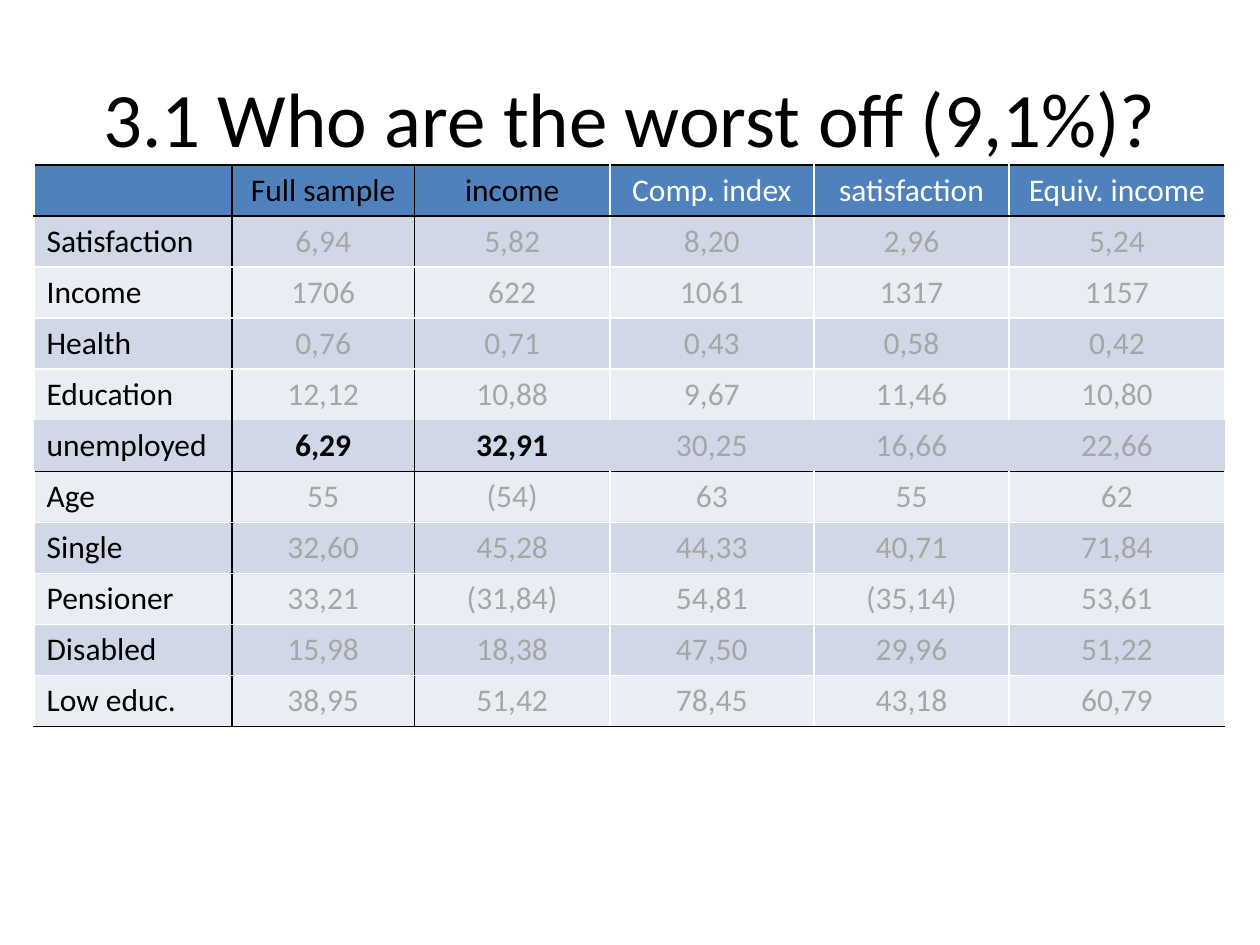
import pptx
import pptx.dml.color
import pptx.enum.text
import pptx.oxml
import pptx.oxml.ns
import pptx.util
from lxml import etree

BLACK, WHITE, GREY = "000000", "FFFFFF", "A6A6A6"
HEADER_FILL = "4F81BD"
BAND_FILLS = ("E9EDF4", "D0D8E8")
COLUMN_WIDTHS = (1.57, 1.45, 1.55, 1.62, 1.55, 1.71)
BLACK_ROW_EDGES = (0, 1, 6, 11)
OPEN_ROW_EDGES = (5,)
BLACK_COLUMN_EDGES = (1, 2)
HIGHLIGHT_ROW = 5
HIGHLIGHT_COLUMNS = (1, 2)

ROWS = (
    ("", "Full sample", "income", "Comp. index", "satisfaction", "Equiv. income"),
    ("Satisfaction", "6,94", "5,82", "8,20", "2,96", "5,24"),
    ("Income", "1706", "622", "1061", "1317", "1157"),
    ("Health", "0,76", "0,71", "0,43", "0,58", "0,42"),
    ("Education", "12,12", "10,88", "9,67", "11,46", "10,80"),
    ("unemployed", "6,29", "32,91", "30,25", "16,66", "22,66"),
    ("Age", "55", "(54)", "63", "55", "62"),
    ("Single", "32,60", "45,28", "44,33", "40,71", "71,84"),
    ("Pensioner", "33,21", "(31,84)", "54,81", "(35,14)", "53,61"),
    ("Disabled", "15,98", "18,38", "47,50", "29,96", "51,22"),
    ("Low educ.", "38,95", "51,42", "78,45", "43,18", "60,79"),
)


def colour(value):
    return pptx.dml.color.RGBColor.from_string(value)


def row_edge_colour(edge):
    if edge in OPEN_ROW_EDGES:
        return None
    return BLACK if edge in BLACK_ROW_EDGES else WHITE


def column_edge_colour(row, edge):
    if edge in BLACK_COLUMN_EDGES:
        return BLACK
    return None if row == HIGHLIGHT_ROW else WHITE


def text_style(row, column):
    if row == 0:
        return (BLACK if column < 3 else WHITE), False
    if row == HIGHLIGHT_ROW and column in HIGHLIGHT_COLUMNS:
        return BLACK, True
    return (BLACK if column == 0 else GREY), False


class SlideBuilder:
    font = "Calibri"
    title_size = 44
    table_size = 18
    grid_columns = 10
    grid_rows = 7.5

    def __init__(self, deck):
        self.unit_x = deck.slide_width / self.grid_columns
        self.unit_y = deck.slide_height / self.grid_rows
        self.page = deck.slides.add_slide(deck.slide_layouts[6])

    def area(self, left, top, width, height):
        return (
            round(left * self.unit_x),
            round(top * self.unit_y),
            round(width * self.unit_x),
            round(height * self.unit_y),
        )

    def set_text(self, frame, text, size, ink, bold=False, centred=True):
        frame.text = text
        align = pptx.enum.text.PP_ALIGN
        para = frame.paragraphs[0]
        para.alignment = align.CENTER if centred else align.LEFT
        for span in para.runs:
            span.font.name = self.font
            span.font.size = pptx.util.Pt(size)
            span.font.bold = bold
            span.font.color.rgb = colour(ink)

    def title(self, text, *place):
        box = self.page.shapes.add_textbox(*self.area(*place))
        box.text_frame.word_wrap = True
        box.text_frame.vertical_anchor = pptx.enum.text.MSO_ANCHOR.MIDDLE
        self.set_text(box.text_frame, text, self.title_size, BLACK)

    def border(self, cell, side, ink):
        properties = cell._tc.get_or_add_tcPr()
        line = etree.SubElement(properties, pptx.oxml.ns.qn(f"a:ln{side}"))
        line.set("w", str(pptx.util.Pt(1)))
        if ink is None:
            etree.SubElement(line, pptx.oxml.ns.qn("a:noFill"))
        else:
            fill = etree.SubElement(line, pptx.oxml.ns.qn("a:solidFill"))
            etree.SubElement(fill, pptx.oxml.ns.qn("a:srgbClr")).set("val", ink)

    def table(self, rows, widths, left, top, height):
        place = self.area(left, top, sum(widths), height)
        table = self.page.shapes.add_table(len(rows), len(widths), *place).table
        table.first_row = False
        table.horz_banding = False
        for column, width in zip(table.columns, widths):
            column.width = round(width * self.unit_x)
        for row, values in enumerate(rows):
            table.rows[row].height = place[3] // len(rows)
            for column, text in enumerate(values):
                self.cell(table.cell(row, column), row, column, text)

    def cell(self, cell, row, column, text):
        edges = {
            "L": column_edge_colour(row, column),
            "R": column_edge_colour(row, column + 1),
            "T": row_edge_colour(row),
            "B": row_edge_colour(row + 1),
        }
        for side, ink in edges.items():
            self.border(cell, side, ink)
        cell.fill.solid()
        cell.fill.fore_color.rgb = colour(BAND_FILLS[row % 2] if row else HEADER_FILL)
        if text:
            ink, bold = text_style(row, column)
            self.set_text(cell.text_frame, text, self.table_size, ink, bold, column > 0)


def main():
    deck = pptx.Presentation()
    deck.slide_width = pptx.util.Inches(10)
    deck.slide_height = pptx.util.Inches(7.5)
    builder = SlideBuilder(deck)
    builder.title("3.1 Who are the worst off (9,1%)?", 0.5, 0.3, 9, 1.25)
    builder.table(ROWS, COLUMN_WIDTHS, 0.27, 1.31, 4.46)
    deck.save("out.pptx")


if __name__ == "__main__":
    main()
